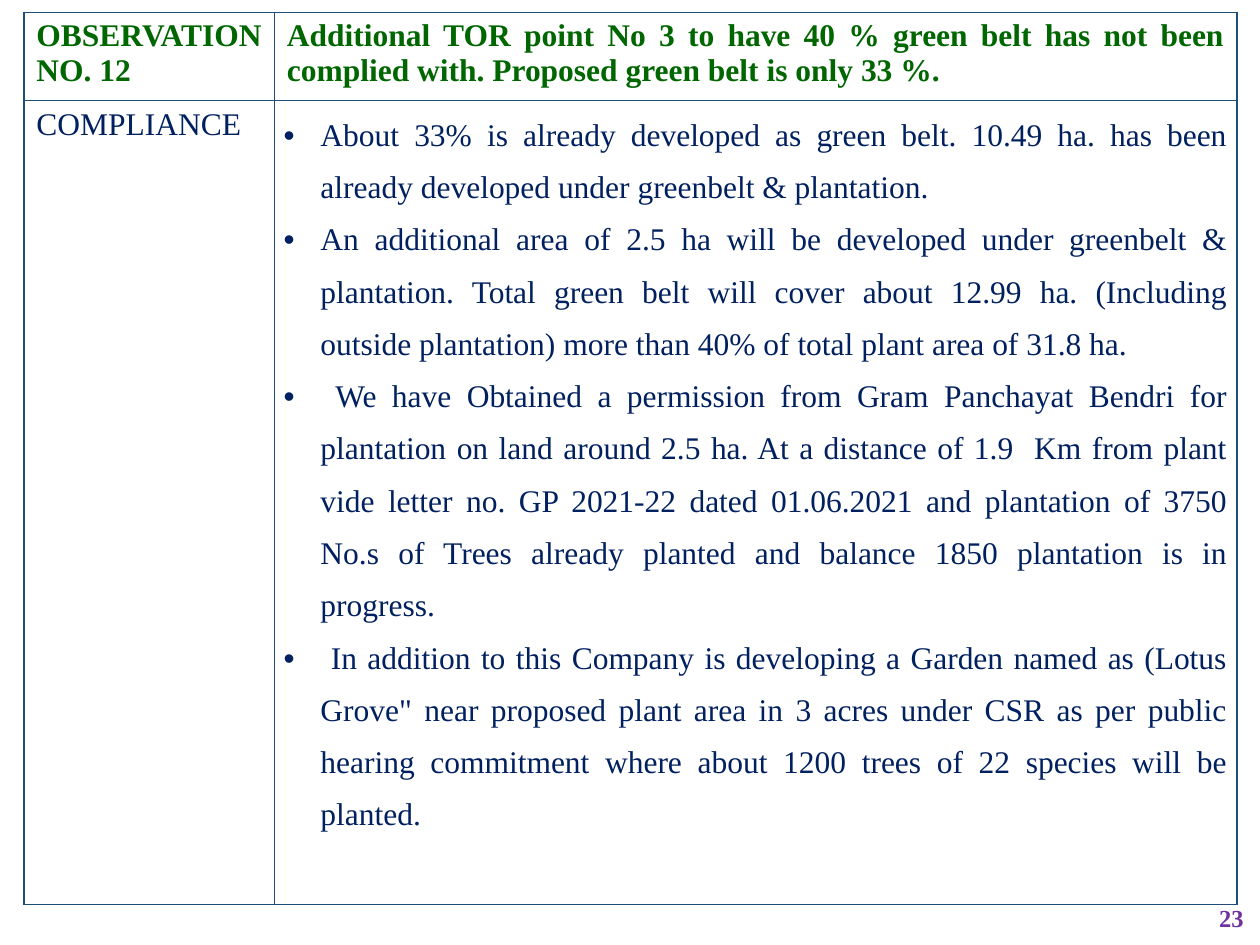
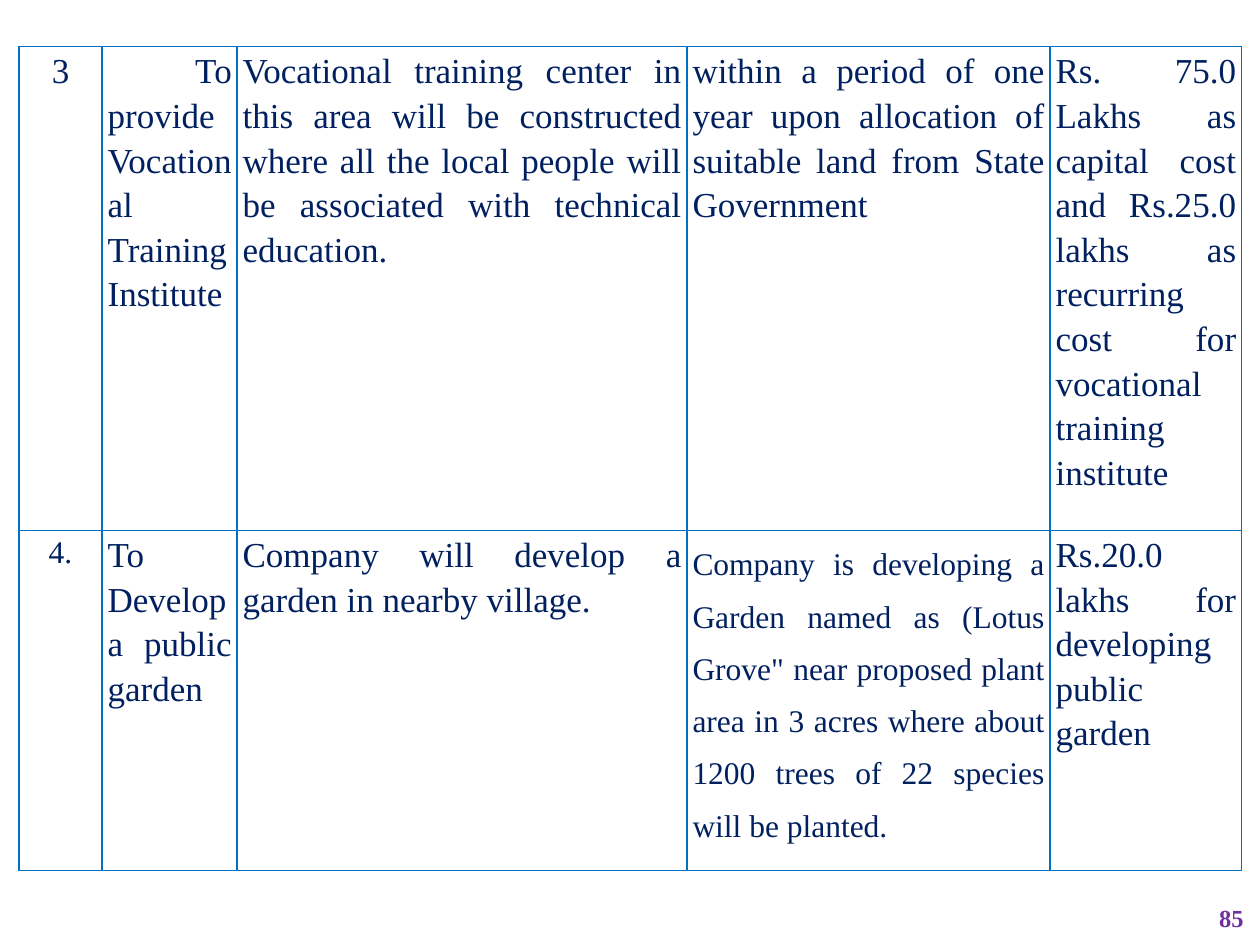
from lxml import etree
from pptx import Presentation
from pptx.dml.color import RGBColor
from pptx.enum.text import PP_ALIGN
from pptx.oxml.ns import qn
from pptx.util import Cm, Pt

CENTER, JUSTIFY, RIGHT = PP_ALIGN.CENTER, PP_ALIGN.JUSTIFY, PP_ALIGN.RIGHT
FONT = "Times New Roman"
COLORS = {
    "observation": "006600",
    "body": "002060",
    "page_number": "7030A0",
    "observation_border": "1F4E79",
    "commitment_border": "0070C0",
}


def write_text(text_frame, text, size=18, color="body", bold=False, align=JUSTIFY,
               spacing=1.0, after=0, bullet_indent=None):
    text_frame.word_wrap = True
    text_frame.text = text
    for paragraph in text_frame.paragraphs:
        paragraph.alignment = align
        paragraph.line_spacing = spacing
        paragraph.space_after = Pt(after)
        font = paragraph.runs[0].font
        font.name, font.size, font.bold = FONT, Pt(size), bold
        font.color.rgb = RGBColor.from_string(COLORS[color])
        if bullet_indent:
            properties = paragraph._p.get_or_add_pPr()
            properties.set("marL", str(bullet_indent))
            properties.set("indent", str(-bullet_indent))
            etree.SubElement(properties, qn("a:buFont"), typeface="Arial")
            etree.SubElement(properties, qn("a:buChar"), char="•")


def add_bordered_table(slide, left, top, widths, heights, border):
    table = slide.shapes.add_table(len(heights), len(widths), Cm(left), Cm(top),
                                   Cm(sum(widths)), Cm(sum(heights))).table
    table.first_row = table.horz_banding = False
    for column, width in zip(table.columns, widths):
        column.width = Cm(width)
    for row, height in zip(table.rows, heights):
        row.height = Cm(height)
    for cell in table.iter_cells():
        cell.fill.background()
        properties = cell._tc.get_or_add_tcPr()
        for position, side in enumerate(("lnL", "lnR", "lnT", "lnB")):
            line = etree.Element(qn(f"a:{side}"), w=str(Pt(1)))
            fill = etree.SubElement(line, qn("a:solidFill"))
            etree.SubElement(fill, qn("a:srgbClr"), val=COLORS[border])
            properties.insert(position, line)
    return table


presentation = Presentation()
presentation.slide_width, presentation.slide_height = Cm(25.4), Cm(19.05)
blank_layout = presentation.slide_layouts[6]

slides = []
for page_number in ("23", "85"):
    slide = presentation.slides.add_slide(blank_layout)
    number_box = slide.shapes.add_textbox(Cm(23.24), Cm(18.08), Cm(2.08), Cm(0.86))
    write_text(number_box.text_frame, page_number, size=14, color="page_number",
               bold=True, align=RIGHT)
    slides.append(slide)
observation_slide, commitment_slide = slides

compliance_points = [
    "About 33% is already developed as green belt. 10.49 ha. has been already developed "
    "under greenbelt & plantation. ",
    "An additional area of 2.5 ha will be developed under greenbelt & plantation. Total "
    "green belt will cover about 12.99 ha. (Including outside plantation) more than 40% "
    "of total plant area of 31.8 ha. ",
    " We have Obtained a permission from Gram Panchayat Bendri for plantation on land "
    "around 2.5 ha. At a distance of 1.9  Km from plant vide letter no. GP 2021-22 dated "
    "01.06.2021 and plantation of 3750 No.s of Trees already planted and balance 1850 "
    "plantation is in progress.",
    " In addition to this Company is developing a Garden named as (Lotus Grove\" near "
    "proposed plant area in 3 acres under CSR as per public hearing commitment where "
    "about 1200 trees of 22 species will be planted.",
]
observation_table = add_bordered_table(observation_slide, 0.48, 0.25, [5.05, 19.41],
                                       [1.77, 16.2], "observation_border")
observation_headings = (
    "OBSERVATION NO. 12",
    "Additional TOR point No 3 to have 40 % green belt has not been complied with. "
    "Proposed green belt is only 33 %.",
)
for column, heading in enumerate(observation_headings):
    write_text(observation_table.cell(0, column).text_frame, heading,
               color="observation", bold=True)
write_text(observation_table.cell(1, 0).text_frame, "COMPLIANCE ")
points_cell = observation_table.cell(1, 1)
points_cell.margin_left = points_cell.margin_right = Cm(0.19)
points_cell.margin_top = points_cell.margin_bottom = 0
write_text(points_cell.text_frame, "\n".join(compliance_points), spacing=1.5,
           bullet_indent=Cm(0.74))

commitments = [
    ["3", " To provide Vocational Training Institute",
     "Vocational training center in this area will be constructed where all the local "
     "people will be associated with technical education.",
     "within a period of one year upon allocation of suitable land from State Government",
     "Rs. 75.0 Lakhs as capital cost and Rs.25.0 lakhs as recurring cost for vocational "
     "training institute"],
    ["4.", "To Develop a public garden",
     "Company will develop a garden in nearby village. ",
     "Company is developing a Garden named as (Lotus Grove\" near proposed plant area in "
     "3 acres where about 1200 trees of 22 species will be planted.",
     "Rs.20.0 lakhs for developing public garden"],
]
special_formats = {
    (1, 0): {"size": 18},
    (1, 3): {"size": 18, "spacing": 1.5, "after": 0},
}
commitment_table = add_bordered_table(commitment_slide, 0.38, 0.94,
                                      [1.68, 2.72, 9.07, 7.32, 3.86], [9.75, 6.86],
                                      "commitment_border")
for row, commitment in enumerate(commitments):
    for column, text in enumerate(commitment):
        cell = commitment_table.cell(row, column)
        cell.margin_left = cell.margin_right = Cm(0.11)
        cell.margin_top = cell.margin_bottom = 0
        text_format = {"size": 20, "spacing": 1.15, "after": 10,
                       "align": JUSTIFY if column else CENTER}
        text_format.update(special_formats.get((row, column), {}))
        write_text(cell.text_frame, text, **text_format)

presentation.save("out.pptx")
